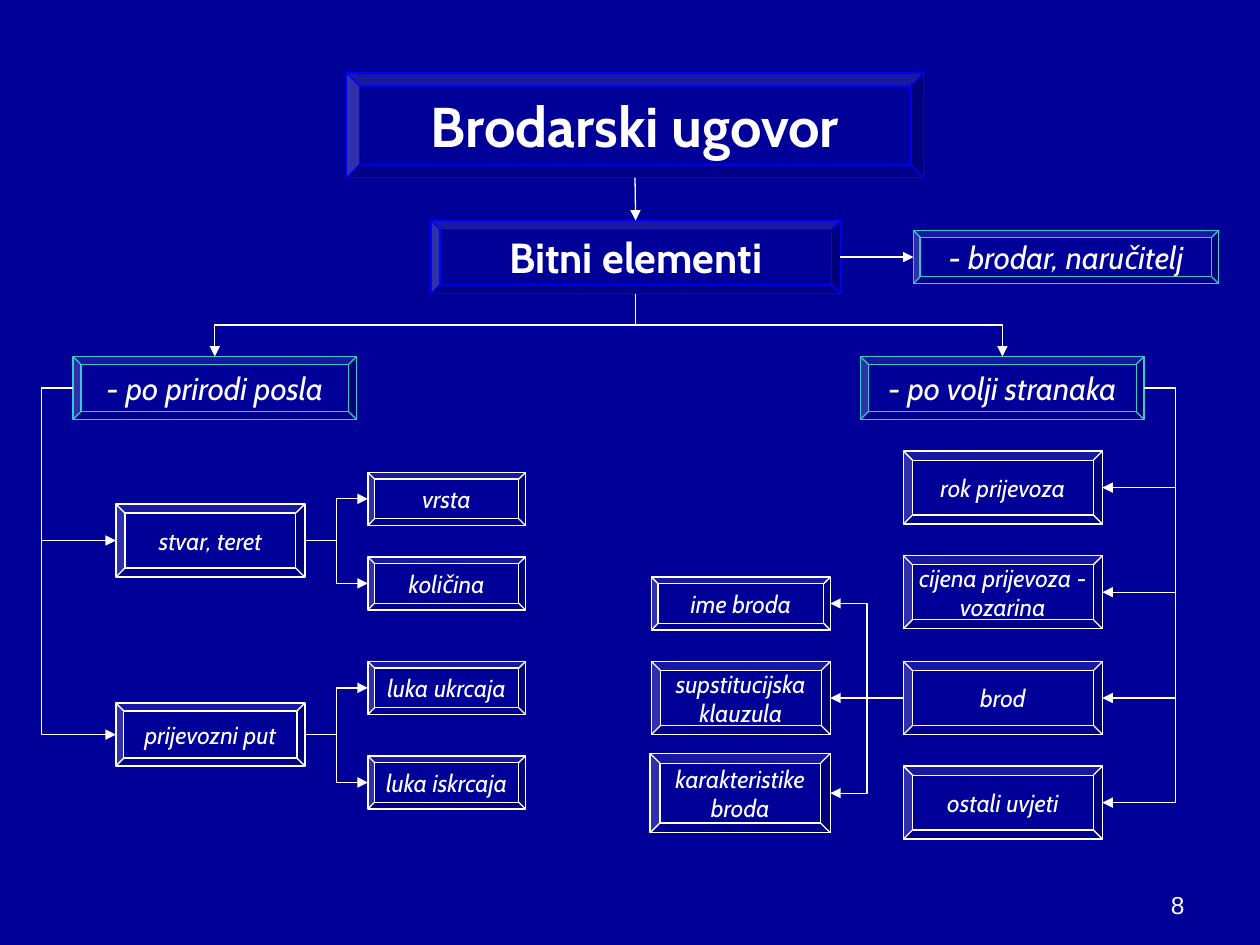
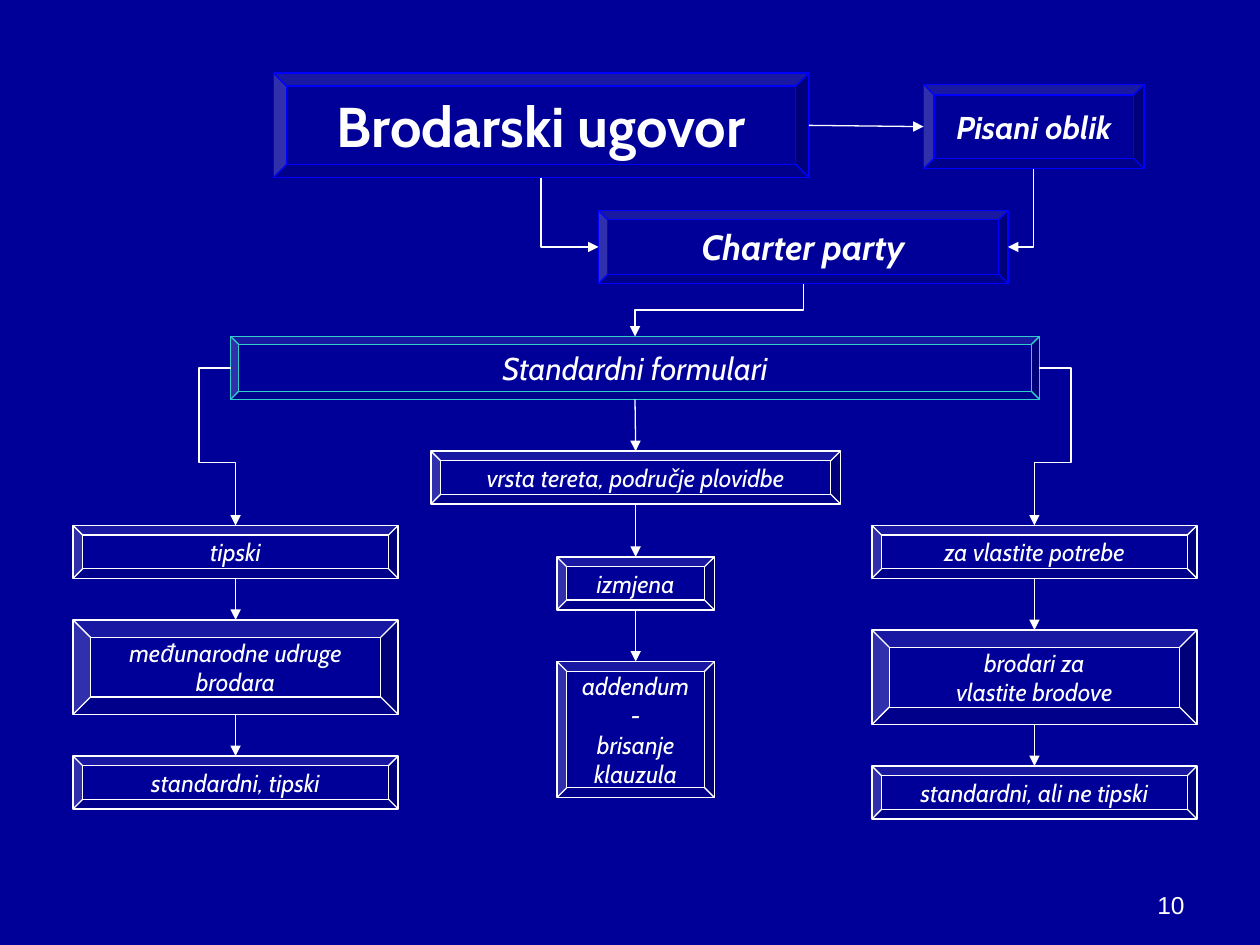
import dataclasses

import pptx
import pptx.dml.color
import pptx.enum.shapes
import pptx.enum.text
import pptx.oxml
import pptx.oxml.ns
import pptx.util

Inches = pptx.util.Inches
Pt = pptx.util.Pt
qn = pptx.oxml.ns.qn
MSO_SHAPE = pptx.enum.shapes.MSO_SHAPE
MSO_CONNECTOR = pptx.enum.shapes.MSO_CONNECTOR
PP_ALIGN = pptx.enum.text.PP_ALIGN
MSO_ANCHOR = pptx.enum.text.MSO_ANCHOR

TOP, LEFT, BOTTOM, RIGHT = range(4)
# A bevel numbers its connection sites differently from a rectangle
BEVEL_SITE = {TOP: 6, LEFT: 4, BOTTOM: 2, RIGHT: 0}


@dataclasses.dataclass(frozen=True)
class Theme:
    background: str = "000099"
    white: str = "FFFFFF"
    blue: str = "0000FF"
    teal: str = "33CCCC"
    font: str = "Cabin"
    number_font: str = "Arial"
    title: int = 32
    subtitle: int = 24
    form: int = 20
    branch: int = 18
    leaf: int = 14
    line: float = 0.75
    fill_alpha: int = 48000


THEME = Theme()

# Box levels: outline colour plus font values
LEVELS = {
    "title": (THEME.blue, {"size": Pt(THEME.title), "bold": True}),
    "subtitle": (THEME.blue, {"size": Pt(THEME.subtitle), "bold": True}),
    "form": (THEME.blue, {"size": Pt(THEME.form), "bold": True, "italic": True}),
    "written": (THEME.blue, {"size": Pt(THEME.branch), "bold": True, "italic": True}),
    "branch": (THEME.teal, {"size": Pt(THEME.branch), "italic": True}),
    "leaf": (THEME.white, {"size": Pt(THEME.leaf), "italic": True}),
}


def rgb(value):
    return pptx.dml.color.RGBColor.from_string(value)


def add_child(parent, tag, **attributes):
    child = parent.makeelement(qn(tag), attributes)
    parent.append(child)
    return child


# Text
def write(tf, lines, align, values):
    for i, line in enumerate(lines):
        p = tf.paragraphs[0] if i == 0 else tf.add_paragraph()
        p.alignment = align
        r = p.add_run()
        r.text = line
        for name, value in values.items():
            setattr(r.font, name, value)
        r.font.color.rgb = rgb(THEME.white)


def add_slide(prs, number):
    s = prs.slides.add_slide(prs.slide_layouts[6])
    s.background.fill.solid()
    s.background.fill.fore_color.rgb = rgb(THEME.background)
    tf = s.shapes.add_textbox(Inches(7.17), Inches(6.83), Inches(2.33), Inches(0.52)).text_frame
    tf.word_wrap = True
    tf.vertical_anchor = MSO_ANCHOR.BOTTOM
    write(tf, [number], PP_ALIGN.RIGHT, {"size": Pt(THEME.leaf), "name": THEME.number_font})
    return s


# Bevelled box
def add_box(s, level, text, x, y, w, h, wrap=False, bevel=0.125):
    outline, font = LEVELS[level]
    sp = s.shapes.add_shape(MSO_SHAPE.BEVEL, Inches(x), Inches(y), Inches(w), Inches(h))
    sp.adjustments[0] = bevel
    sp.shadow.inherit = False
    sp.fill.solid()
    sp.fill.fore_color.rgb = rgb(THEME.background)
    color = sp.fill._xPr.find(qn("a:solidFill"))[0]
    add_child(color, "a:alpha", val=str(THEME.fill_alpha))
    sp.line.color.rgb = rgb(outline)
    sp.line.width = Pt(THEME.line)
    tf = sp.text_frame
    frame = {"margin_left": 0, "margin_right": 0, "margin_top": 0, "margin_bottom": 0,
             "word_wrap": wrap, "vertical_anchor": MSO_ANCHOR.MIDDLE}
    for name, value in frame.items():
        setattr(tf, name, value)
    write(tf, text.split("\n"), PP_ALIGN.CENTER, {"name": THEME.font, **font})
    return sp


def side_middle(sp, side):
    x, y = sp.left + sp.width // 2, sp.top + sp.height // 2
    return {TOP: (x, sp.top), LEFT: (sp.left, y),
            BOTTOM: (x, sp.top + sp.height), RIGHT: (sp.left + sp.width, y)}[side]


# Connectors
def add_arrow(s, kind, begin, end):
    c = s.shapes.add_connector(kind, *begin, *end)
    c.line.color.rgb = rgb(THEME.white)
    c.line.width = Pt(THEME.line)
    add_child(c.line._get_or_add_ln(), "a:tailEnd", type="triangle")
    add_child(c._element.spPr, "a:effectLst")
    return c


def set_bend(c, preset, *adjustments):
    geometry = c._element.spPr.find(qn("a:prstGeom"))
    geometry.set("prst", preset)
    guides = geometry.find(qn("a:avLst"))
    if guides is None:
        guides = add_child(geometry, "a:avLst")
    for i, value in enumerate(adjustments, 1):
        add_child(guides, "a:gd", name=f"adj{i}", fmla=f"val {round(value * 100000)}")


def straight(s, source, source_side, target, target_side):
    c = add_arrow(s, MSO_CONNECTOR.STRAIGHT,
                  side_middle(source, source_side), side_middle(target, target_side))
    c.begin_connect(source, source_side)
    c.end_connect(target, target_side)
    joints = c._element.nvCxnSpPr.cNvCxnSpPr
    joints.stCxn.idx = BEVEL_SITE[source_side]
    joints.endCxn.idx = BEVEL_SITE[target_side]


def elbow_across(s, source, source_side, target, target_side, via_x, drop=None):
    """Leave sideways and turn at via_x; drop is the share of height before a second turn."""
    begin, end = side_middle(source, source_side), side_middle(target, target_side)
    c = add_arrow(s, MSO_CONNECTOR.ELBOW, begin, end)
    turn = (Inches(via_x) - begin[0]) / (end[0] - begin[0])
    if drop is None:
        set_bend(c, "bentConnector3", turn)
    else:
        set_bend(c, "bentConnector4", turn, drop)


def elbow_down(s, source, target, target_side=TOP):
    """Leave downwards; end from above after two turns or from the side after one."""
    (x1, y1), (x2, y2) = side_middle(source, BOTTOM), side_middle(target, target_side)
    mid_x, mid_y = (x1 + x2) // 2, (y1 + y2) // 2
    half_w, half_h = (y2 - y1) // 2, abs(x2 - x1) // 2
    rightward = x2 > x1
    reach = -half_w if rightward else half_w
    c = add_arrow(s, MSO_CONNECTOR.ELBOW, (mid_x - reach, mid_y - half_h),
                  (mid_x + reach, mid_y + half_h))
    c._element.spPr.get_or_add_xfrm().rot = 270 if rightward else 90
    if target_side == TOP:
        set_bend(c, "bentConnector3", 0.5)
    else:
        set_bend(c, "bentConnector2")


def build_elements_slide(prs):
    s = add_slide(prs, "8")

    # Heading and the three kinds of essential elements
    title = add_box(s, "title", "Brodarski ugovor", 2.75, 0.58, 4.58, 0.83)
    elements = add_box(s, "subtitle", "Bitni elementi", 3.42, 1.75, 3.25, 0.58)
    parties = add_box(s, "branch", "- brodar, naručitelj", 7.25, 1.83, 2.42, 0.42)
    by_nature = add_box(s, "branch", "- po prirodi posla", 0.58, 2.83, 2.25, 0.5)
    by_will = add_box(s, "branch", "- po volji stranaka", 6.83, 2.83, 2.25, 0.5)
    straight(s, title, BOTTOM, elements, TOP)
    straight(s, elements, RIGHT, parties, LEFT)
    for branch in (by_nature, by_will):
        elbow_down(s, elements, branch)

    # By nature of the business: cargo and voyage with their details
    nature = [
        ("stvar, teret", 4, 0.58, [("vrsta", 3.75), ("količina", 4.42)]),
        ("prijevozni put", 5.58, 0.5, [("luka ukrcaja", 5.25), ("luka iskrcaja", 6)]),
    ]
    for text, y, h, details in nature:
        subject = add_box(s, "leaf", text, 0.92, y, 1.5, h)
        elbow_across(s, by_nature, LEFT, subject, LEFT, 0.33)
        for detail, detail_y in details:
            box = add_box(s, "leaf", detail, 2.92, detail_y, 1.25, 0.42)
            elbow_across(s, subject, RIGHT, box, LEFT, 2.67)

    # By will of the parties
    terms = {}
    for i, text in enumerate(["rok prijevoza", "cijena prijevoza - vozarina",
                              "brod", "ostali uvjeti"]):
        y = round(3.58 + i * 2.5 / 3, 2)
        terms[text] = add_box(s, "leaf", text, 7.17, y, 1.58, 0.58, wrap=True)
        elbow_across(s, by_will, RIGHT, terms[text], RIGHT, 9.33)

    # Ship details
    ship = terms["brod"]
    name = add_box(s, "leaf", "ime broda", 5.17, 4.58, 1.42, 0.42)
    clause = add_box(s, "leaf", "supstitucijska klauzula", 5.17, 5.25, 1.42, 0.58, wrap=True)
    features = add_box(s, "leaf", "karakteristike broda", 5.16, 5.98, 1.43, 0.63, wrap=True)
    straight(s, ship, LEFT, clause, RIGHT)
    for box in (name, features):
        elbow_across(s, ship, LEFT, box, RIGHT, 6.88)


def add_chain(s, x, w, steps):
    """Stack boxes joined by downward arrows; return the first."""
    boxes = [add_box(s, "leaf", text, x, y, w, h, wrap=True, bevel=bevel)
             for text, y, h, bevel in steps]
    for upper, lower in zip(boxes, boxes[1:]):
        straight(s, upper, BOTTOM, lower, TOP)
    return boxes[0]


def build_forms_slide(prs):
    s = add_slide(prs, "10")
    bevel = 0.183

    # Contract, its written form and the standard forms
    title = add_box(s, "title", "Brodarski ugovor", 2.17, 0.58, 4.25, 0.83)
    written = add_box(s, "written", "Pisani oblik", 7.33, 0.67, 1.75, 0.67)
    charter = add_box(s, "form", "Charter party", 4.75, 1.67, 3.25, 0.58)
    forms = add_box(s, "branch", "Standardni formulari", 1.83, 2.67, 6.42, 0.5)
    straight(s, title, RIGHT, written, LEFT)
    elbow_down(s, title, charter, LEFT)
    elbow_down(s, written, charter, RIGHT)
    elbow_down(s, charter, forms)

    # Outer columns: standard forms and own forms
    typical = add_chain(s, 0.58, 2.58, [
        ("tipski", 4.17, 0.42, bevel),
        ("međunarodne udruge brodara", 4.92, 0.75, bevel),
        ("standardni, tipski", 6, 0.42, bevel)])
    own = add_chain(s, 6.92, 2.58, [
        ("za vlastite potrebe", 4.17, 0.42, bevel),
        ("brodari za\nvlastite brodove", 5, 0.75, bevel),
        ("standardni, ali ne tipski", 6.08, 0.42, bevel)])
    elbow_across(s, forms, LEFT, typical, TOP, 1.58, drop=0.6)
    elbow_across(s, forms, RIGHT, own, TOP, 8.5, drop=0.6)

    # Middle column: cargo and area, then changes
    scope = add_box(s, "leaf", "vrsta tereta, područje plovidbe", 3.42, 3.58, 3.25, 0.42,
                    wrap=True, bevel=bevel)
    change = add_chain(s, 4.42, 1.25, [
        ("izmjena", 4.42, 0.42, bevel),
        ("addendum\n-\nbrisanje klauzula", 5.25, 1.08, 0.073)])
    straight(s, forms, BOTTOM, scope, TOP)
    straight(s, scope, BOTTOM, change, TOP)


def main():
    prs = pptx.Presentation()
    prs.slide_width, prs.slide_height = Inches(10), Inches(7.5)
    build_elements_slide(prs)
    build_forms_slide(prs)
    prs.save("out.pptx")


if __name__ == "__main__":
    main()
